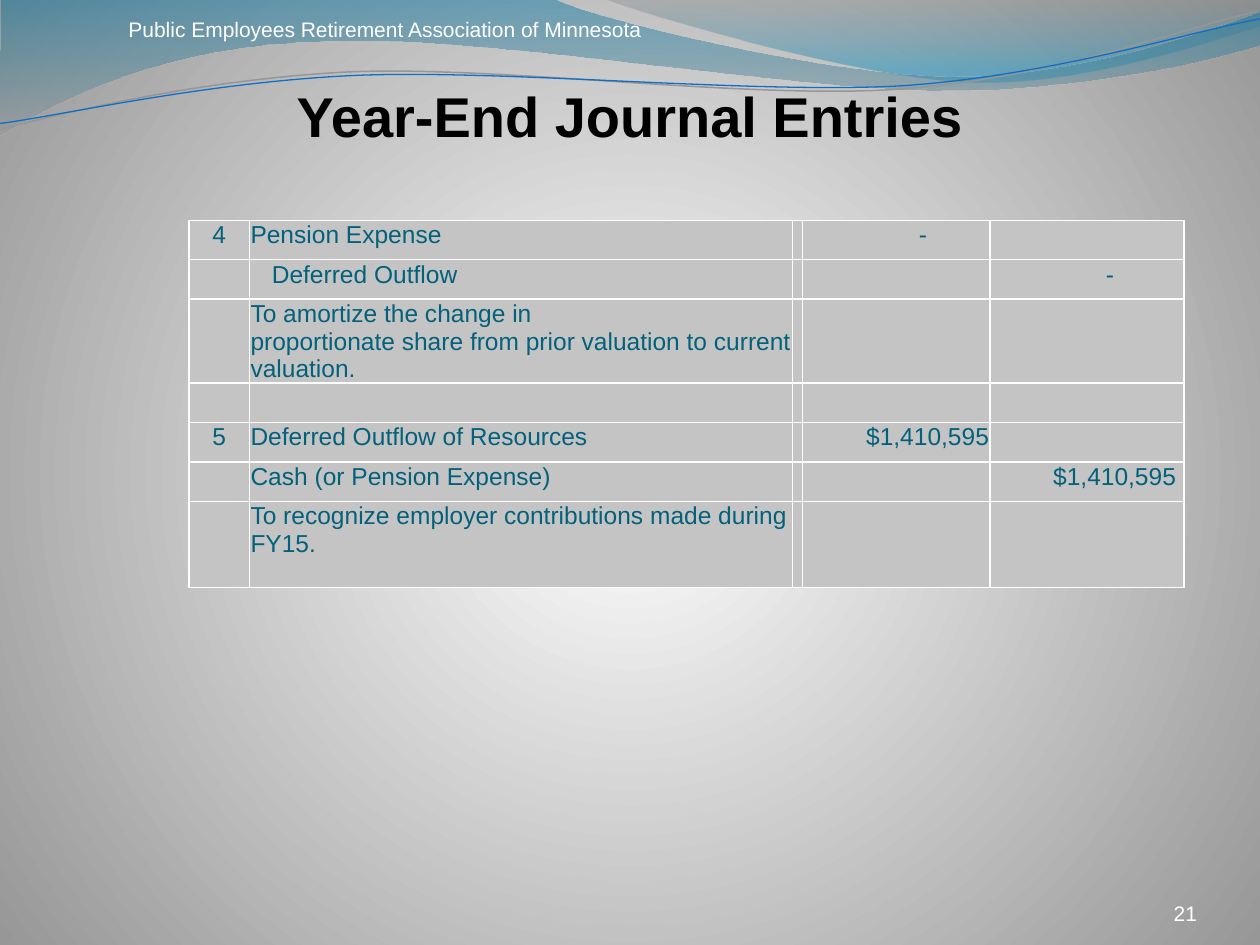
import pptx
import pptx.util
import pptx.oxml
import pptx.oxml.ns
import pptx.dml.color
import pptx.enum.text
from lxml import etree

Cm, Pt = pptx.util.Cm, pptx.util.Pt
ALIGN, ANCHOR = pptx.enum.text.PP_ALIGN, pptx.enum.text.MSO_ANCHOR
qn = pptx.oxml.ns.qn
NS = pptx.oxml.ns.nsdecls("a")
FONT = "Arial"
COLORS = {
    "white": "FFFFFF", "black": "000000", "edge": "979797", "cell": "C4C4C4",
    "text": "04617B", "gray": "7E7E7E", "aqua": "008BBF", "teal": "0074A1",
    "silver": "9A9A9A", "gray_line": "969696", "blue_line": "0F6FC6",
}

BACK_WAVE = [[(12.17, -0.03)],
             [(12.93, 0.28), (17.32, 1.57), (19.53, 1.65)],
             [(21.74, 1.75), (24.41, 0.81), (25.4, 0.53)],
             [(25.4, 0)]]
FRONT_WAVE = [[(0.03, 0)], [(11.2, 0)],
              [(12.12, 0.43), (16.89, 1.55), (19.28, 1.55)],
              [(21.69, 1.55), (24.36, 0.64), (25.43, 0.23)],
              [(25.45, 0.89)],
              [(24.99, 1.07), (22.12, 1.85), (18.97, 1.83)],
              [(15.82, 1.83), (9.73, 0.69), (6.55, 0.84)],
              [(3.3, 0.89), (1.19, 2.03), (0, 2.74)]]
GRAY_CURVE = [[(-0.03, 2.62)],
              [(1.22, 2.29), (4.01, 1.6), (7.04, 1.45)],
              [(10.06, 1.32), (15.04, 2.01), (18.08, 1.8)],
              [(21.16, 1.6), (23.85, 0.56), (25.35, 0.23)]]
BLUE_CURVE = [[(0, 2.49)],
              [(1.19, 2.34), (4.17, 1.65), (7.19, 1.52)],
              [(10.24, 1.4), (15.16, 1.9), (18.19, 1.73)],
              [(21.23, 1.52), (23.9, 0.66), (25.4, 0.38)]]

COL_WIDTHS = [1.22, 10.95, 0.2, 3.78, 3.91]
ROW_HEIGHTS = [0.75, 0.75, 1.69, 0.75, 0.75, 0.75, 1.73]
ENTRIES = [
    ["4", "Pension Expense", "", "-", ""],
    ["", "Deferred Outflow", "", "", "-"],
    ["", "To amortize the change in\nproportionate share from prior valuation "
         "to current valuation.", "", "", ""],
    ["", "", "", "", ""],
    ["5", "Deferred Outflow of Resources", "", "$1,410,595", ""],
    ["", "Cash (or Pension Expense)", "", "", "$1,410,595"],
    ["", "To recognize employer contributions made during FY15.", "", "", ""],
]
COL_ALIGN = [ALIGN.CENTER, ALIGN.LEFT, ALIGN.LEFT, ALIGN.RIGHT, ALIGN.RIGHT]
LEFT_INSETS = {(1, 1): 0.45}
RIGHT_INSETS = {(0, 3): 1.27, (1, 4): 1.41, (5, 4): 0.16}


def rgb(name):
    return pptx.dml.color.RGBColor.from_string(COLORS[name])


def write_text(tf, text, size=12, color="white", bold=False, align=ALIGN.LEFT):
    p = tf.paragraphs[0]
    p.alignment = align
    for i, line in enumerate(text.split("\n")):
        if i:
            p.add_line_break()
        r = p.add_run()
        r.text = line
        r.font.name, r.font.size, r.font.bold = FONT, Pt(size), bold
        r.font.color.rgb = rgb(color)


def set_insets(tf, left=0, top=0, right=0, bottom=0):
    tf.margin_left, tf.margin_top = Cm(left), Cm(top)
    tf.margin_right, tf.margin_bottom = Cm(right), Cm(bottom)


def gradient(stops, direction):
    gs = "".join(
        f'<a:gs pos="{pos * 1000}"><a:srgbClr val="{COLORS[name]}">'
        f'<a:alpha val="{alpha * 1000}"/></a:srgbClr></a:gs>'
        for pos, name, alpha in stops)
    return pptx.oxml.parse_xml(
        f'<a:gradFill {NS} rotWithShape="1"><a:gsLst>{gs}</a:gsLst>{direction}</a:gradFill>')


def set_background(s):
    s.background.fill.solid()
    solid = s.background._cSld.find(".//" + qn("a:solidFill"))
    circle = ('<a:path path="circle"><a:fillToRect l="50000" t="50000" '
              'r="50000" b="50000"/></a:path>')
    solid.getparent().replace(
        solid, gradient([(0, "white", 100), (100, "edge", 100)], circle))


def add_curve(s, left, top, segments, stops=None, line=None, width=0):
    points = [(left + Cm(x), top + Cm(y)) for seg in segments for x, y in seg]
    builder = s.shapes.build_freeform(*points[0])
    builder.add_line_segments(points[1:], close=stops is not None)
    sp = builder.convert_to_shape()
    sp.shadow.inherit = False
    lines = iter(list(sp._element.iter(qn("a:lnTo"))))
    for seg in segments[1:]:
        group = [next(lines) for _ in seg]
        if len(group) == 3:
            bezier = etree.Element(qn("a:cubicBezTo"))
            group[0].addprevious(bezier)
            for node in group:
                bezier.append(node[0])
                node.getparent().remove(node)
    if stops:
        sp.fill.solid()
        solid = sp._element.spPr.find(qn("a:solidFill"))
        solid.getparent().replace(solid, gradient(stops, '<a:lin ang="5400000" scaled="1"/>'))
        sp.line.fill.background()
    else:
        sp.fill.background()
        sp.line.color.rgb = rgb(line)
        sp.line.width = Pt(width)


def add_header(s, left, top):
    add_curve(s, left, top, BACK_WAVE, stops=[(0, "gray", 30), (80, "aqua", 45)])
    add_curve(s, left, top, FRONT_WAVE, stops=[(0, "teal", 45), (100, "silver", 55)])
    sp = s.shapes.add_textbox(left + Cm(2.34), top + Cm(0.2), Cm(11.23), Cm(0.76))
    sp.text_frame.word_wrap = True
    write_text(sp.text_frame, "Public Employees Retirement Association of Minnesota")
    add_curve(s, left, top, GRAY_CURVE, line="gray_line", width=0.85)
    add_curve(s, left, top, BLUE_CURVE, line="blue_line", width=0.75)


def add_page_number(s, left, top, width, height):
    sp = s.shapes.add_textbox(left, top, width, height)
    tf = sp.text_frame
    tf.word_wrap = True
    tf.vertical_anchor = ANCHOR.BOTTOM
    set_insets(tf)
    write_text(tf, "21", align=ALIGN.RIGHT)


def place_title(s, left, top, width, height):
    sp = s.shapes.title
    sp.left, sp.top, sp.width, sp.height = left, top, width, height
    tf = sp.text_frame
    tf.vertical_anchor = ANCHOR.BOTTOM
    set_insets(tf, top=0.13)
    write_text(tf, "Year-End Journal Entries", size=32, color="black",
               bold=True, align=ALIGN.CENTER)
    s.shapes._spTree.append(sp._element)


def set_borders(cell):
    tcPr = cell._tc.get_or_add_tcPr()
    for i, side in enumerate(("lnL", "lnR", "lnT", "lnB")):
        tcPr.insert(i, pptx.oxml.parse_xml(
            f'<a:{side} {NS} w="12700"><a:solidFill>'
            f'<a:srgbClr val="{COLORS["white"]}"/></a:solidFill></a:{side}>'))


def add_journal(s, left, top):
    frame = s.shapes.add_table(len(ENTRIES), len(COL_WIDTHS), left, top,
                               Cm(sum(COL_WIDTHS)), Cm(sum(ROW_HEIGHTS)))
    table = frame.table
    table.first_row = table.horz_banding = False
    for col, width in zip(table.columns, COL_WIDTHS):
        col.width = Cm(width)
    for i, (row, height) in enumerate(zip(table.rows, ROW_HEIGHTS)):
        row.height = Cm(height)
        for j, cell in enumerate(row.cells):
            set_insets(cell, LEFT_INSETS.get((i, j), 0.02), 0.02,
                       RIGHT_INSETS.get((i, j), 0.02))
            cell.fill.solid()
            cell.fill.fore_color.rgb = rgb("cell")
            set_borders(cell)
            if ENTRIES[i][j]:
                write_text(cell.text_frame, ENTRIES[i][j], size=14,
                           color="text", align=COL_ALIGN[j])


def main():
    prs = pptx.Presentation()
    prs.slide_width, prs.slide_height = Cm(25.4), Cm(19.05)
    s = prs.slides.add_slide(prs.slide_layouts[5])
    set_background(s)
    add_header(s, Cm(0), Cm(0))
    add_page_number(s, Cm(22.23), Cm(17.78), Cm(1.9), Cm(0.89))
    place_title(s, Cm(1.27), Cm(0), Cm(22.86), Cm(3))
    add_journal(s, Cm(3.81), Cm(4.44))
    prs.save("out.pptx")


if __name__ == "__main__":
    main()
